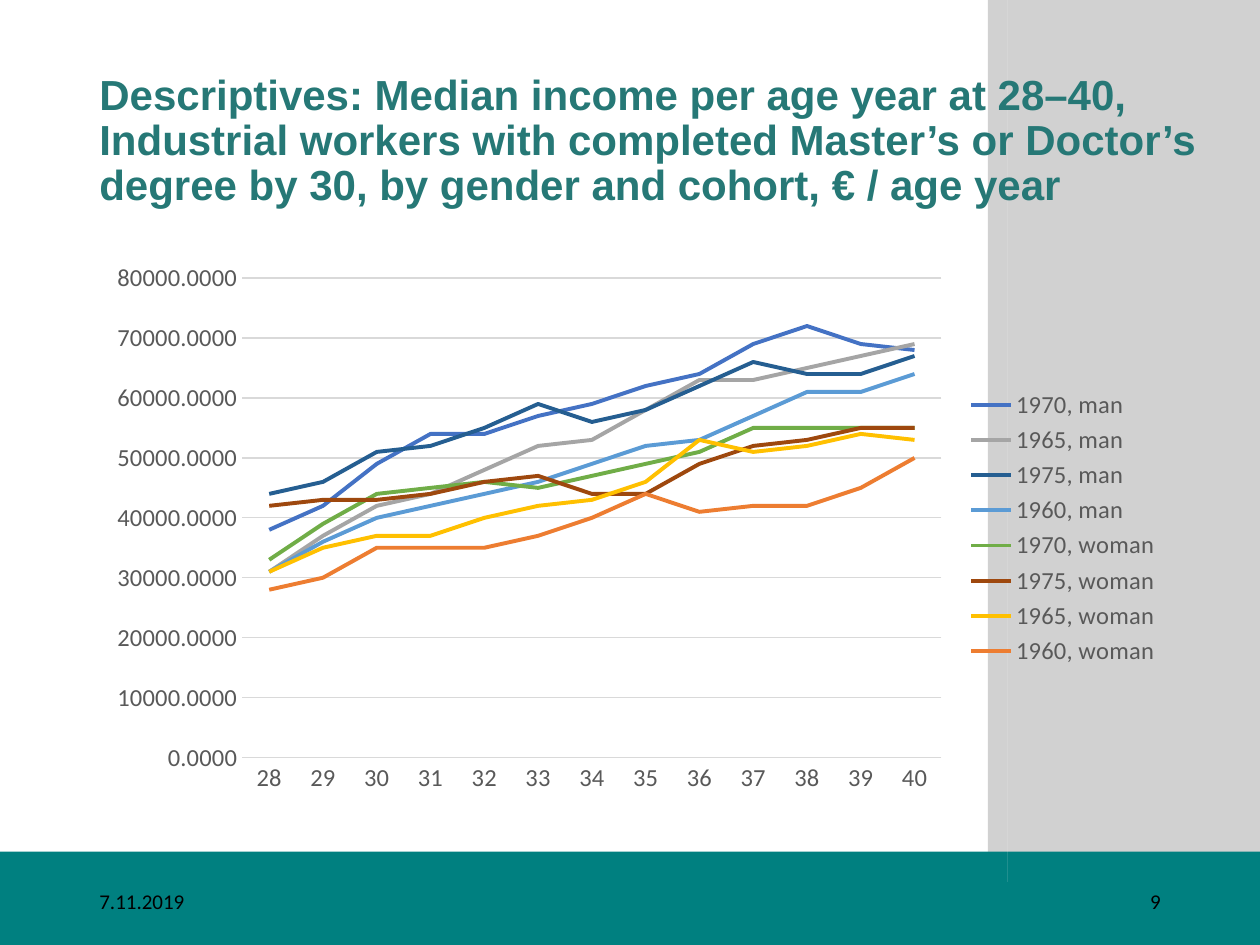
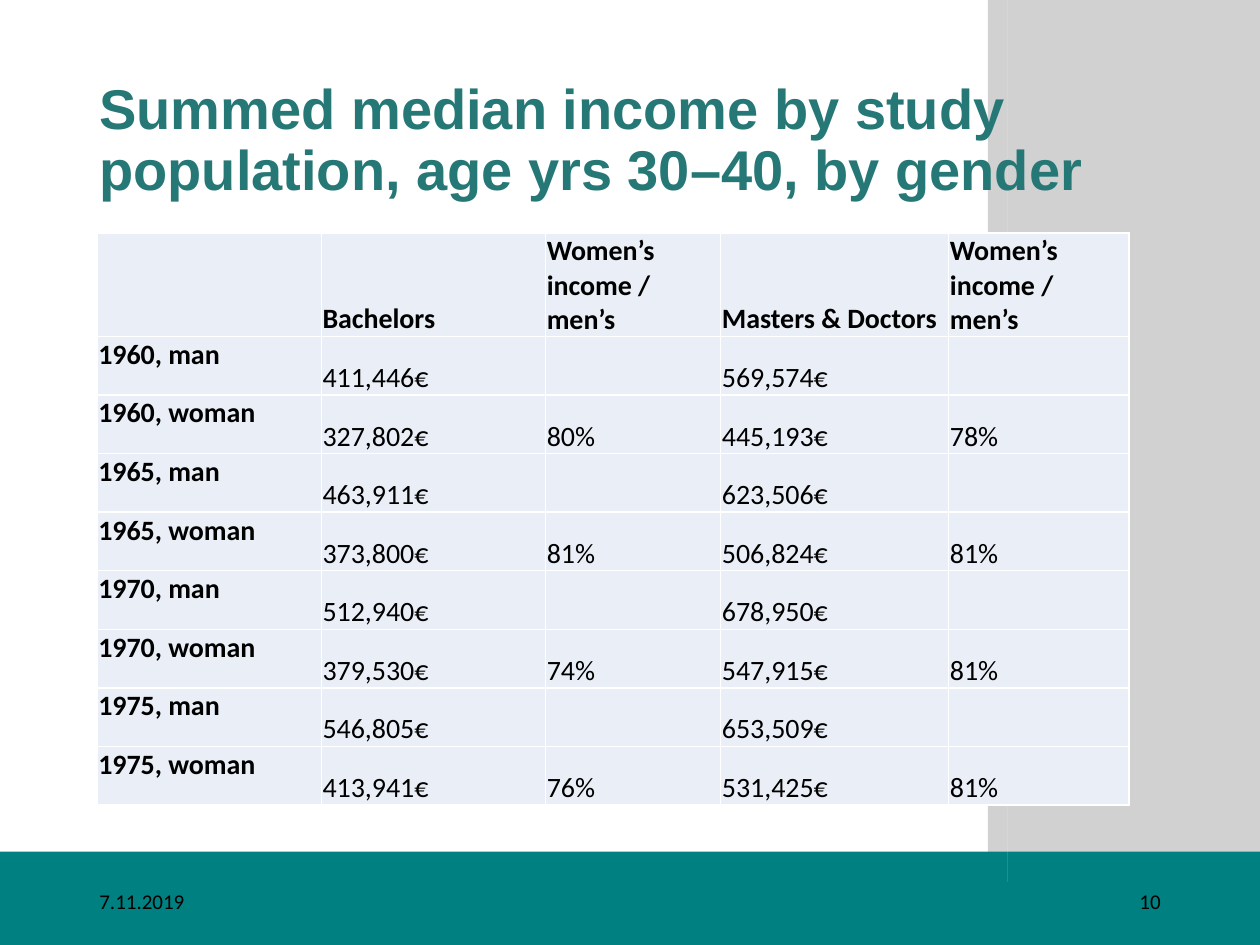
import pptx
import pptx.util
import pptx.dml.color
import pptx.chart.data
import pptx.enum.chart
import pptx.enum.shapes
import pptx.enum.text
import pptx.oxml
import pptx.oxml.ns
from lxml import etree

Inches, Pt = pptx.util.Inches, pptx.util.Pt
RGB = pptx.dml.color.RGBColor.from_string
ALIGN = pptx.enum.text.PP_ALIGN
ANCHOR = pptx.enum.text.MSO_ANCHOR
RECT = pptx.enum.shapes.MSO_SHAPE.RECTANGLE
qn = pptx.oxml.ns.qn

COL = {"title": "267876", "band": "008080", "side": "A5A5A5", "white": "FFFFFF",
       "black": "000000", "cell": "EAEFF7", "axis": "595959", "grid": "D9D9D9"}
TITLES = [
    ("Descriptives: Median income per age year at 28–40, Industrial workers with "
     "completed Master’s or Doctor’s degree by 30, by gender and cohort, € / age year",
     24, 8.92),
    ("Summed median income by study population, age yrs 30–40, by gender", 32, 8.62),
]
# Bezier outline of the curved edge: start, then two controls and an end each
START = (7.75, 0.33)
CURVES = [((7.84, -0.55), (8.22, 0.52), (8.32, 1.28)),
          ((8.42, 2.04), (8.44, 3.99), (8.34, 4.86)),
          ((8.24, 5.74), (7.83, 7.31), (7.73, 6.56)),
          ((7.63, 5.8), (7.65, 1.21), (7.75, 0.33))]


def paint(shape, color):
    shape.shadow.inherit = False
    shape.fill.solid()
    shape.fill.fore_color.rgb = RGB(color)
    shape.line.fill.background()


def write(slide, text, box, size, font, color, bold=False, align=ALIGN.LEFT):
    frame = slide.shapes.add_textbox(*map(Inches, box)).text_frame
    frame.word_wrap = True
    frame.vertical_anchor = ANCHOR.MIDDLE
    frame.text = text
    para = frame.paragraphs[0]
    para.alignment = align
    run = para.runs[0].font
    run.size, run.name, run.bold = Pt(size), font, bold
    run.color.rgb = RGB(color)
    return para


deck = pptx.Presentation()
deck.slide_width, deck.slide_height = Inches(10), Inches(7.5)

# Points along the curved edge
points, here = [], START
for c1, c2, end in CURVES:
    for step in range(1, 31):
        t = step / 30
        points.append(tuple(
            (1 - t) ** 3 * a + 3 * (1 - t) ** 2 * t * b + 3 * (1 - t) * t ** 2 * c + t ** 3 * d
            for a, b, c, d in zip(here, c1, c2, end)))
    here = end

# Shared background, footer and title
slides = []
for number, (title, size, width) in enumerate(TITLES, 9):
    slide = deck.slides.add_slide(deck.slide_layouts[6])
    slides.append(slide)
    side = slide.shapes.add_shape(RECT, Inches(7.84), 0, Inches(2.16), Inches(7.35))
    paint(side, COL["side"])
    tint = side.fill.fore_color._xFill.find(qn("a:srgbClr"))
    etree.SubElement(tint, qn("a:alpha"), val="50000")
    band = slide.shapes.add_shape(RECT, 0, Inches(6.76), Inches(10), Inches(0.74))
    paint(band, COL["band"])
    pen = slide.shapes.build_freeform(*START, scale=Inches(1))
    pen.add_line_segments(points, close=True)
    paint(pen.convert_to_shape(), COL["white"])
    write(slide, "7.11.2019", (0.69, 6.95, 2.25, 0.4), 12, "Calibri", COL["black"])
    write(slide, str(number), (7.06, 6.95, 2.25, 0.4), 12, "Calibri", COL["black"],
          align=ALIGN.RIGHT)
    head = write(slide, title, (0.69, 0.4, width, 1.45), size, "Arial", COL["title"], True)
    head.line_spacing = 0.9

# Income chart, values in thousands of euros
SERIES = [
    ("1970, man", "4472C4", [38, 42, 49, 54, 54, 57, 59, 62, 64, 69, 72, 69, 68]),
    ("1965, man", "A5A5A5", [31, 37, 42, 44, 48, 52, 53, 58, 63, 63, 65, 67, 69]),
    ("1975, man", "255E91", [44, 46, 51, 52, 55, 59, 56, 58, 62, 66, 64, 64, 67]),
    ("1960, man", "5B9BD5", [31, 36, 40, 42, 44, 46, 49, 52, 53, 57, 61, 61, 64]),
    ("1970, woman", "70AD47", [33, 39, 44, 45, 46, 45, 47, 49, 51, 55, 55, 55, 55]),
    ("1975, woman", "9E480E", [42, 43, 43, 44, 46, 47, 44, 44, 49, 52, 53, 55, 55]),
    ("1965, woman", "FFC000", [31, 35, 37, 37, 40, 42, 43, 46, 53, 51, 52, 54, 53]),
    ("1960, woman", "ED7D31", [28, 30, 35, 35, 35, 37, 40, 44, 41, 42, 42, 45, 50]),
]
data = pptx.chart.data.CategoryChartData(number_format="###0.0000")
data.categories = [str(age) for age in range(28, 41)]
for name, color, vals in SERIES:
    data.add_series(name, [val * 1000 for val in vals])
chart = slides[0].shapes.add_chart(
    pptx.enum.chart.XL_CHART_TYPE.LINE, Inches(0.76), Inches(2), Inches(8.55),
    Inches(4.38), data).chart
chart.has_title = False
chart.font.size, chart.font.name = Pt(14), "Calibri"
chart.font.color.rgb = RGB(COL["axis"])
chart.has_legend = True
chart.legend.position = pptx.enum.chart.XL_LEGEND_POSITION.RIGHT
chart.legend.include_in_layout = False
chart.plots[0].vary_by_categories = False
for line, (name, color, vals) in zip(chart.plots[0].series, SERIES):
    line.smooth = False
    line.marker.style = pptx.enum.chart.XL_MARKER_STYLE.NONE
    line.format.line.width = Pt(2.25)
    line.format.line.color.rgb = RGB(color)

# Chart axes
ages, euros = chart.category_axis, chart.value_axis
for axis in (ages, euros):
    axis.major_tick_mark = axis.minor_tick_mark = pptx.enum.chart.XL_TICK_MARK.NONE
euros.minimum_scale, euros.maximum_scale, euros.major_unit = 0, 80000, 10000
euros.tick_labels.number_format = "###0.0000"
euros.tick_labels.number_format_is_linked = False
euros.format.line.fill.background()
euros.has_major_gridlines = True
for rule in (ages.format.line, euros.major_gridlines.format.line):
    rule.width = Pt(0.75)
    rule.color.rgb = RGB(COL["grid"])

# Income table
RATIO = "Women’s income / men’s"
ROWS = [
    ("", "Bachelors", RATIO, "Masters & Doctors", RATIO),
    ("1960, man", "411,446€", "", "569,574€", ""),
    ("1960, woman", "327,802€", "80%", "445,193€", "78%"),
    ("1965, man", "463,911€", "", "623,506€", ""),
    ("1965, woman", "373,800€", "81%", "506,824€", "81%"),
    ("1970, man", "512,940€", "", "678,950€", ""),
    ("1970, woman", "379,530€", "74%", "547,915€", "81%"),
    ("1975, man", "546,805€", "", "653,509€", ""),
    ("1975, woman", "413,941€", "76%", "531,425€", "81%"),
]
WIDTHS = [1.78, 1.78, 1.39, 1.81, 1.43]
HEAD, TALL = 0.82, 4.54
table = slides[1].shapes.add_table(
    len(ROWS), len(WIDTHS), Inches(0.77), Inches(1.85), Inches(sum(WIDTHS)),
    Inches(TALL)).table
table.first_row = table.horz_banding = False
for col, width in zip(table.columns, WIDTHS):
    col.width = Inches(width)
for r, texts in enumerate(ROWS):
    table.rows[r].height = Inches((TALL - HEAD) / (len(ROWS) - 1) if r else HEAD)
    for c, text in enumerate(texts):
        cell = table.cell(r, c)
        cell.fill.solid()
        cell.fill.fore_color.rgb = RGB(COL["cell"])
        props = cell._tc.get_or_add_tcPr()
        for i, edge in enumerate(("a:lnL", "a:lnR", "a:lnT", "a:lnB")):
            border = etree.Element(qn(edge), w=str(Pt(1)))
            fill = etree.SubElement(border, qn("a:solidFill"))
            etree.SubElement(fill, qn("a:srgbClr"), val=COL["white"])
            props.insert(i, border)
        if not text:
            continue
        cell.margin_left = cell.margin_right = cell.margin_top = Inches(0.01)
        cell.margin_bottom = 0
        cell.vertical_anchor = ANCHOR.BOTTOM if c else ANCHOR.TOP
        cell.text_frame.text = text
        font = cell.text_frame.paragraphs[0].runs[0].font
        font.size, font.name, font.bold = Pt(16), "Calibri", r == 0 or c == 0
        font.color.rgb = RGB(COL["black"])

deck.save("out.pptx")
